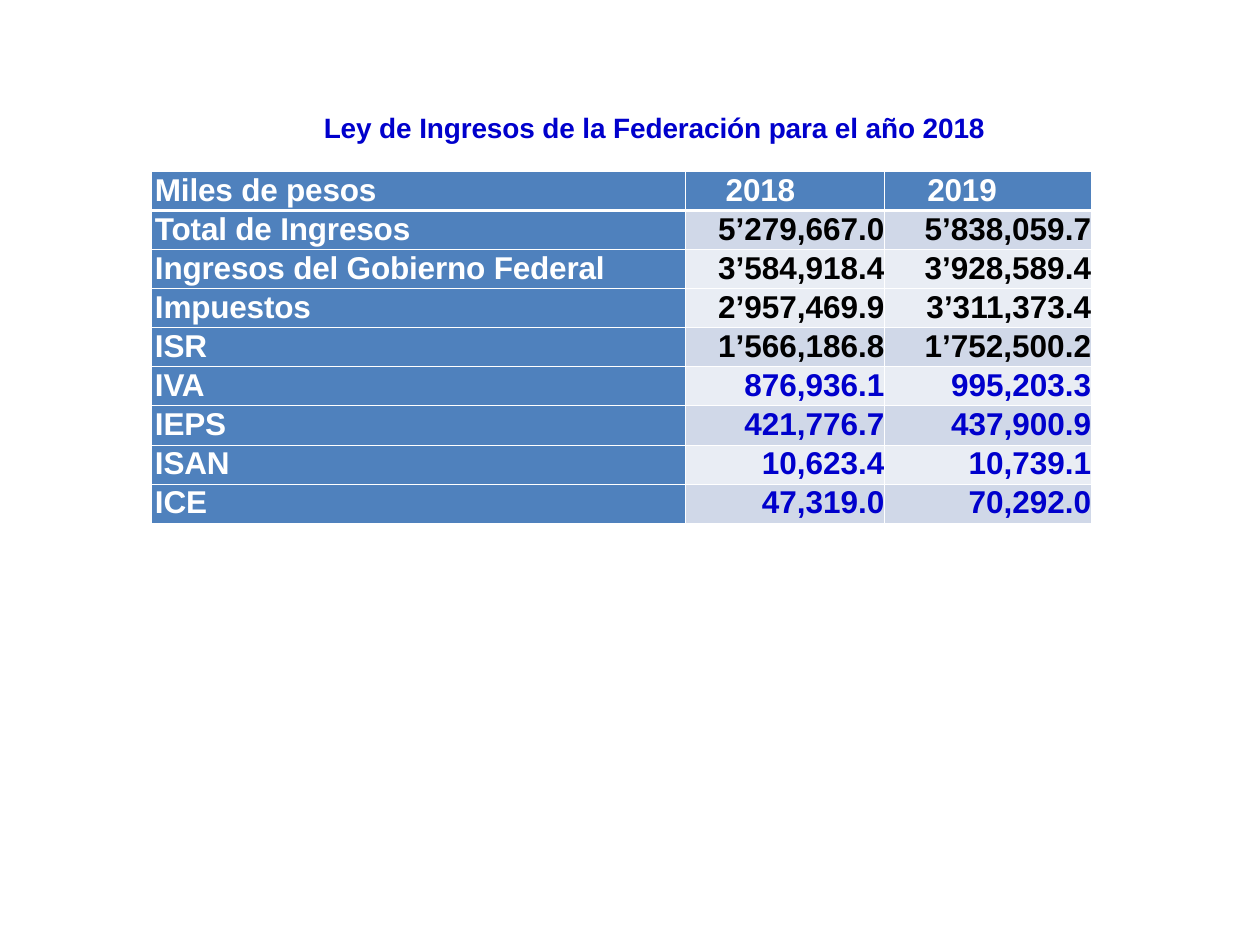
import pptx
import pptx.util
import pptx.dml.color
import pptx.enum.text
import pptx.oxml
import pptx.oxml.ns

COLORS = {"blue": "0000CC", "header": "4F81BD", "white": "FFFFFF",
          "black": "000000", "dark_band": "D0D8E8", "light_band": "E9EDF4"}
Inches, Pt = pptx.util.Inches, pptx.util.Pt
ALIGN = pptx.enum.text.PP_ALIGN


def format_text(paragraph, size, color, indent, spacing):
    paragraph.space_before = Pt(0.7)
    paragraph._p.get_or_add_pPr().set("marL", str(Inches(indent)))
    paragraph._p.get_or_add_pPr().set("indent", "0")
    for run in paragraph.runs:
        run.font.name = "Arial"
        run.font.size = Pt(size)
        run.font.bold = True
        run.font.color.rgb = pptx.dml.color.RGBColor.from_string(COLORS[color])
        run._r.get_or_add_rPr().set("spc", str(spacing))


def add_border(cell, side, width):
    cell._tc.get_or_add_tcPr().append(pptx.oxml.parse_xml(
        f'<a:{side} {pptx.oxml.ns.nsdecls("a")} w="{Pt(width)}"><a:solidFill>'
        f'<a:srgbClr val="{COLORS["white"]}"/></a:solidFill></a:{side}>'))


deck = pptx.Presentation()
deck.slide_width, deck.slide_height = Inches(10), Inches(7.5)
slide = deck.slides.add_slide(deck.slide_layouts[5])

heading = slide.shapes.title
heading.left, heading.top = Inches(2.56), Inches(0.87)
heading.width, heading.height = Inches(5.75), Inches(0.28)
frame = heading.text_frame
frame.text = "Ley de Ingresos de la Federación para el año 2018"
frame.margin_left = frame.margin_right = frame.margin_bottom = 0
frame.margin_top = Inches(0.01)
frame.vertical_anchor = pptx.enum.text.MSO_ANCHOR.TOP
frame.auto_size = pptx.enum.text.MSO_AUTO_SIZE.SHAPE_TO_FIT_TEXT
frame.paragraphs[0].alignment = ALIGN.LEFT
format_text(frame.paragraphs[0], 16, "blue", 0.01, -7)

income = [
    ("Miles de pesos", "2018", "2019", "header", "white"),
    ("Total de Ingresos", "5’279,667.0", "5’838,059.7", "dark_band", "black"),
    ("Ingresos del Gobierno Federal", "3’584,918.4", "3’928,589.4", "light_band", "black"),
    ("Impuestos", "2’957,469.9", "3’311,373.4", "light_band", "black"),
    ("ISR", "1’566,186.8", "1’752,500.2", "dark_band", "black"),
    ("IVA", "876,936.1", "995,203.3", "light_band", "blue"),
    ("IEPS", "421,776.7", "437,900.9", "dark_band", "blue"),
    ("ISAN", "10,623.4", "10,739.1", "light_band", "blue"),
    ("ICE", "47,319.0", "70,292.0", "dark_band", "blue"),
]
column_widths = [4.24, 1.58, 1.64]
header_indents = [0.03, 0.32, 0.34]
row_height = 0.31

table = slide.shapes.add_table(
    len(income), len(column_widths), Inches(1.2), Inches(1.36),
    Inches(sum(column_widths)), Inches(row_height * len(income))).table
for column, width in zip(table.columns, column_widths):
    column.width = Inches(width)

for row, (*texts, band, figure_color) in enumerate(income):
    table.rows[row].height = Inches(row_height)
    for col, text in enumerate(texts):
        cell = table.cell(row, col)
        is_label = row == 0 or col == 0
        cell.text_frame.text = text
        cell.margin_left = cell.margin_right = cell.margin_bottom = 0
        cell.margin_top = Inches(0.01)
        paragraph = cell.text_frame.paragraphs[0]
        paragraph.alignment = ALIGN.LEFT if is_label else ALIGN.RIGHT
        format_text(paragraph, 18, "white" if is_label else figure_color,
                    header_indents[col] if is_label else 0, -10 if is_label else 0)
        add_border(cell, "lnL", 0.5)
        add_border(cell, "lnR", 0.5)
        add_border(cell, "lnT", 1.5 if row == 1 else 0.5)
        add_border(cell, "lnB", 1.5 if row == 0 else 0.5)
        cell.fill.solid()
        cell.fill.fore_color.rgb = pptx.dml.color.RGBColor.from_string(
            COLORS["header" if is_label else band])

deck.save("out.pptx")
